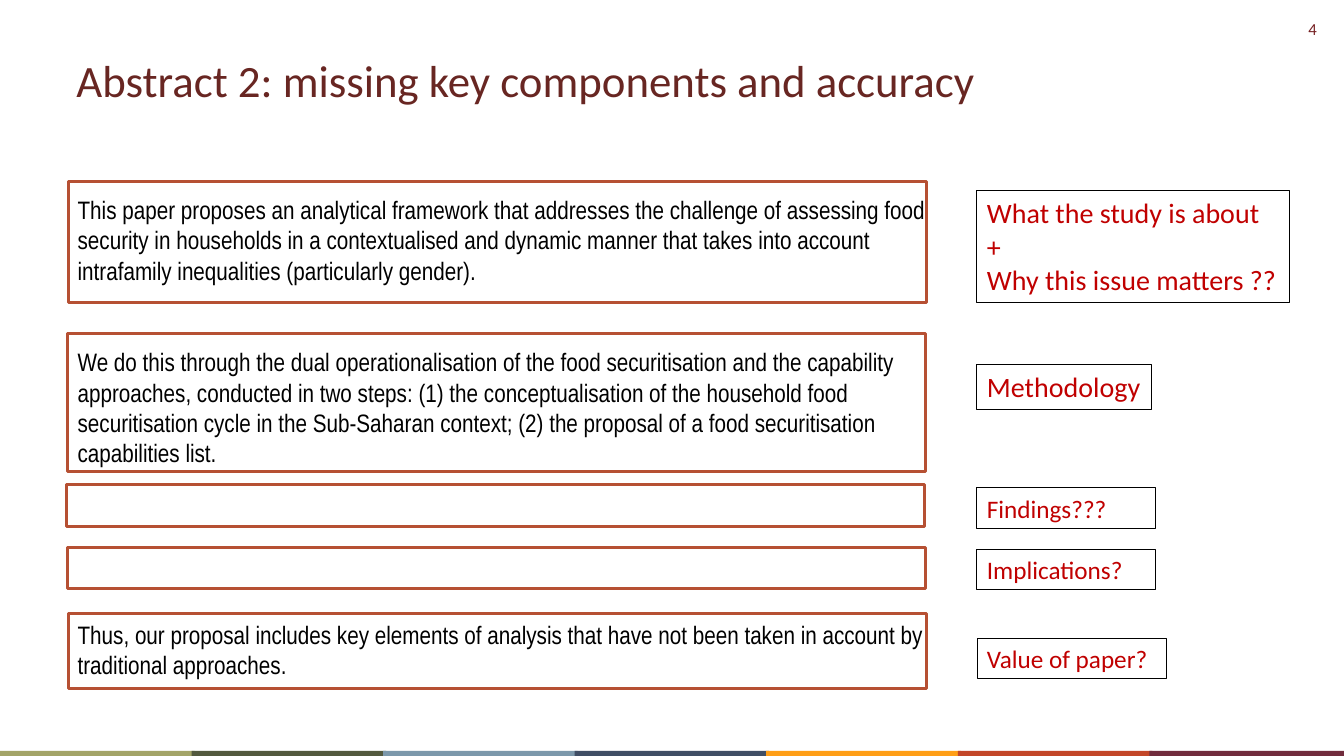
import pptx
import pptx.util
from pptx.dml.color import RGBColor
from pptx.enum.shapes import MSO_SHAPE
from pptx.enum.text import MSO_ANCHOR, PP_ALIGN
from pptx.util import Inches, Pt

COLORS = {
    "title": "682622", "page": "762123", "body": "000000",
    "label": "C00000", "edge": "000000", "frame": "B65033",
}
STRIPES = ["A3A467", "53593E", "7C98AB", "404E65", "FF9E16", "C34628", "712C3D"]

deck = pptx.Presentation()
deck.slide_width, deck.slide_height = Inches(13.33), Inches(7.5)
slide = deck.slides.add_slide(deck.slide_layouts[6])


def add_box(area, fill=None, line=None, width=0.75):
    """Add a flat rectangle; without fill or line that part is left clear."""
    box = slide.shapes.add_shape(MSO_SHAPE.RECTANGLE, *map(Inches, area))
    box.shadow.inherit = False
    if fill:
        box.fill.solid()
        box.fill.fore_color.rgb = RGBColor.from_string(fill)
    else:
        box.fill.background()
    if line:
        box.line.color.rgb = RGBColor.from_string(line)
        box.line.width = Pt(width)
    else:
        box.line.fill.background()
    return box


def write(box, lines, size, color, face="Calibri", align=PP_ALIGN.LEFT, **layout):
    """Fill a box with paragraphs; layout holds text frame settings."""
    frame = box.text_frame
    layout = {"word_wrap": True, "vertical_anchor": MSO_ANCHOR.TOP, **layout}
    for name, value in layout.items():
        setattr(frame, name, value)
    style = {"size": Pt(size), "name": face}
    for i, line in enumerate(lines):
        para = frame.add_paragraph() if i else frame.paragraphs[0]
        para.alignment = align
        run = para.add_run()
        run.text = line
        for name, value in style.items():
            setattr(run.font, name, value)
        run.font.color.rgb = RGBColor.from_string(COLORS[color])


# Colour strip along the bottom edge
for i, color in enumerate(STRIPES):
    add_box((1.9 * i, 7.45, 1.93, 0.06), fill=color)

# Page number and title
page = slide.shapes.add_textbox(*map(Inches, (12.46, 0.14, 0.7, 0.3)))
write(page, ["4"], 12, "page", align=PP_ALIGN.RIGHT)
title = slide.shapes.add_textbox(*map(Inches, (0.66, 0.47, 12, 0.74)))
write(title, ["Abstract 2: missing key components and accuracy"], 32, "title")

# Parts of the abstract: left, top, height, top inset, text
parts = [
    (0.68, 1.8, 1.2, 0.13,
     "This paper proposes an analytical framework that addresses the challenge "
     "of assessing food security in households in a contextualised and dynamic "
     "manner that takes into account intrafamily inequalities (particularly gender)."),
    (0.67, 3.31, 1.37, 0.13,
     "We do this through the dual operationalisation of the food securitisation "
     "and the capability approaches, conducted in two steps: (1) the "
     "conceptualisation of the household food securitisation cycle in the "
     "Sub-Saharan context; (2) the proposal of a food securitisation "
     "capabilities list."),
    (0.66, 4.81, 0.41, 0, ""),
    (0.67, 5.43, 0.41, 0, ""),
    (0.68, 6.09, 0.74, 0.05,
     "Thus, our proposal includes key elements of analysis that have not been "
     "taken in account by traditional approaches."),
]
for left, top, height, inset, text in parts:
    box = add_box((left, top, 8.51, height), line=COLORS["frame"], width=2)
    if text:
        write(box, [text], 18, "body", "Arial Narrow",
              margin_left=Inches(0.77 - left), margin_right=0,
              margin_top=Inches(inset), margin_bottom=0)

# Labels: top, width, height, size, wrap, lines
labels = [
    (1.89, 3.1, 1.11, 20, False,
     ["What the study is about", "+", "Why this issue matters ??"]),
    (3.62, 1.73, 0.44, 20, False, ["Methodology"]),
    (4.84, 1.77, 0.4, 18, True, ["Findings???"]),
    (5.45, 1.77, 0.4, 18, True, ["Implications?"]),
    (6.33, 1.88, 0.4, 18, True, ["Value of paper?"]),
]
for top, width, height, size, wrap, lines in labels:
    box = add_box((9.69, top, width, height), line=COLORS["edge"])
    write(box, lines, size, "label", word_wrap=wrap)

deck.save("out.pptx")
